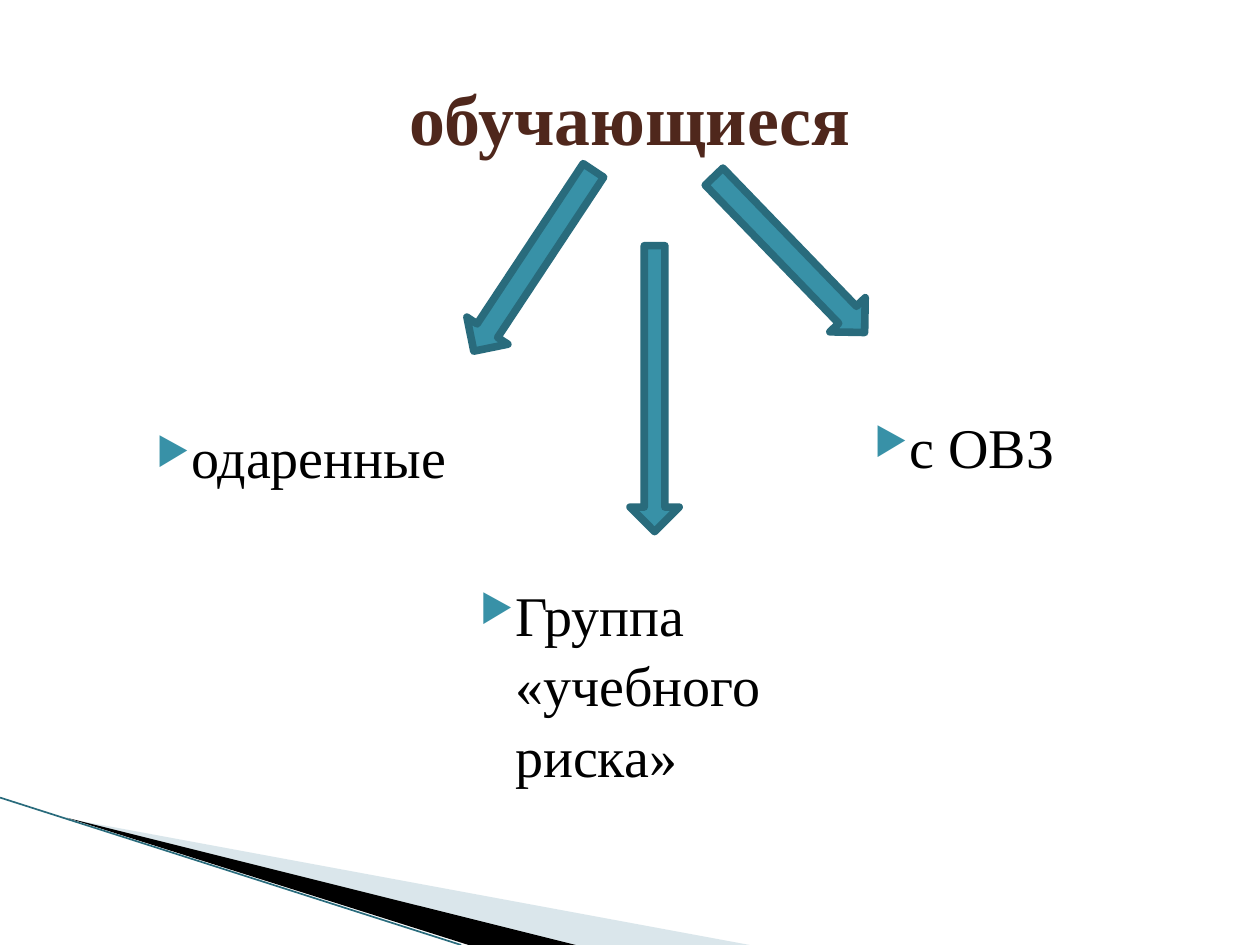
"""Build a slide that splits students into three groups with arrows."""
from lxml.etree import SubElement
from pptx import Presentation
from pptx.dml.color import RGBColor
from pptx.enum.shapes import MSO_CONNECTOR, MSO_SHAPE
from pptx.enum.text import MSO_ANCHOR, PP_ALIGN
from pptx.oxml.ns import qn
from pptx.util import Inches, Pt

FONT = "Times New Roman"
BLACK = RGBColor(0x00, 0x00, 0x00)
BROWN = RGBColor(0x4F, 0x27, 0x1C)
TEAL = RGBColor(0x38, 0x91, 0xA7)
DARK_TEAL = RGBColor(0x29, 0x6B, 0x7C)
PALE = RGBColor(0xA3, 0xC2, 0xCE)

TITLE = "обучающиеся"
GROUPS = [
    ("одаренные", (1.02, 3.28, 3.13, 1.02)),
    ("с ОВЗ", (6.72, 3.2, 2.34, 1.02)),
    ("Группа «учебного риска»", (3.59, 4.53, 3.13, 2.03)),
]
ARROWS = [
    ((5, 1.95, 0.39, 2.27), 0, 0.42),
    ((4.04, 1.21, 0.39, 1.72), 33.5, 0.5),
    ((6.07, 1.16, 0.39, 1.72), 316, 0.5),
]
WEDGES = [
    ([(0.55, 6.5), (5.95, 7.5), (4.56, 7.5)], PALE, 40),
    ([(0.53, 6.49), (4.57, 7.5), (3.72, 7.5)], BLACK, 100),
]
EDGE = (0, 6.33, 3.66, 7.5)


def inches(values):
    return [Inches(v) for v in values]


def write(p, text, size, color, bold=False):
    r = p.add_run()
    r.text = text
    r.font.name, r.font.size, r.font.bold = FONT, Pt(size), bold
    r.font.color.rgb = color


def add_wedge(slide, points, color, opacity):
    corners = [inches(point) for point in points]
    builder = slide.shapes.build_freeform(*corners[0])
    builder.add_line_segments(corners[1:])
    s = builder.convert_to_shape()
    s.shadow.inherit = False
    s.fill.solid()
    s.fill.fore_color.rgb = color
    s.line.fill.background()
    if opacity < 100:
        clr = s._element.spPr.find(".//" + qn("a:srgbClr"))
        SubElement(clr, qn("a:alpha"), val=str(opacity * 1000))


def add_edge(slide):
    s = slide.shapes.add_connector(MSO_CONNECTOR.STRAIGHT, *inches(EDGE))
    s.line.color.rgb = DARK_TEAL
    s.line.width = Pt(0.95)
    SubElement(s._element.spPr, qn("a:effectLst"))


def add_group(slide, text, box):
    tf = slide.shapes.add_textbox(*inches(box)).text_frame
    tf.word_wrap = True
    p = tf.paragraphs[0]
    pPr = p._p.get_or_add_pPr()
    pPr.set("marL", str(Inches(0.4)))
    pPr.set("indent", str(Inches(-0.28)))
    SubElement(SubElement(pPr, qn("a:buClr")), qn("a:srgbClr"), val=str(TEAL))
    SubElement(pPr, qn("a:buSzPct"), val="68000")
    SubElement(pPr, qn("a:buChar"), char="▶")
    p.line_spacing = 1.05
    write(p, text, 32, BLACK)


def add_arrow(slide, box, angle, shaft):
    s = slide.shapes.add_shape(MSO_SHAPE.DOWN_ARROW, *inches(box))
    s.shadow.inherit = False
    s.rotation = angle
    s.adjustments[0] = shaft
    s.fill.solid()
    s.fill.fore_color.rgb = TEAL
    s.line.color.rgb = DARK_TEAL
    s.line.width = Pt(4.33)
    SubElement(s._element.spPr.find(qn("a:ln")), qn("a:round"))


def main():
    prs = Presentation()
    prs.slide_width, prs.slide_height = Inches(10), Inches(7.5)
    slide = prs.slides.add_slide(prs.slide_layouts[5])
    for wedge in WEDGES:
        add_wedge(slide, *wedge)
    add_edge(slide)

    title = slide.shapes.title
    title.left, title.top, title.width, title.height = inches((0.5, 0.3, 9, 1.25))
    tf = title.text_frame
    tf.vertical_anchor = MSO_ANCHOR.MIDDLE
    p = tf.paragraphs[0]
    p.alignment = PP_ALIGN.CENTER
    write(p, TITLE, 41, BROWN, bold=True)

    for group in GROUPS:
        add_group(slide, *group)
    for arrow in ARROWS:
        add_arrow(slide, *arrow)
    prs.save("out.pptx")


if __name__ == "__main__":
    main()
